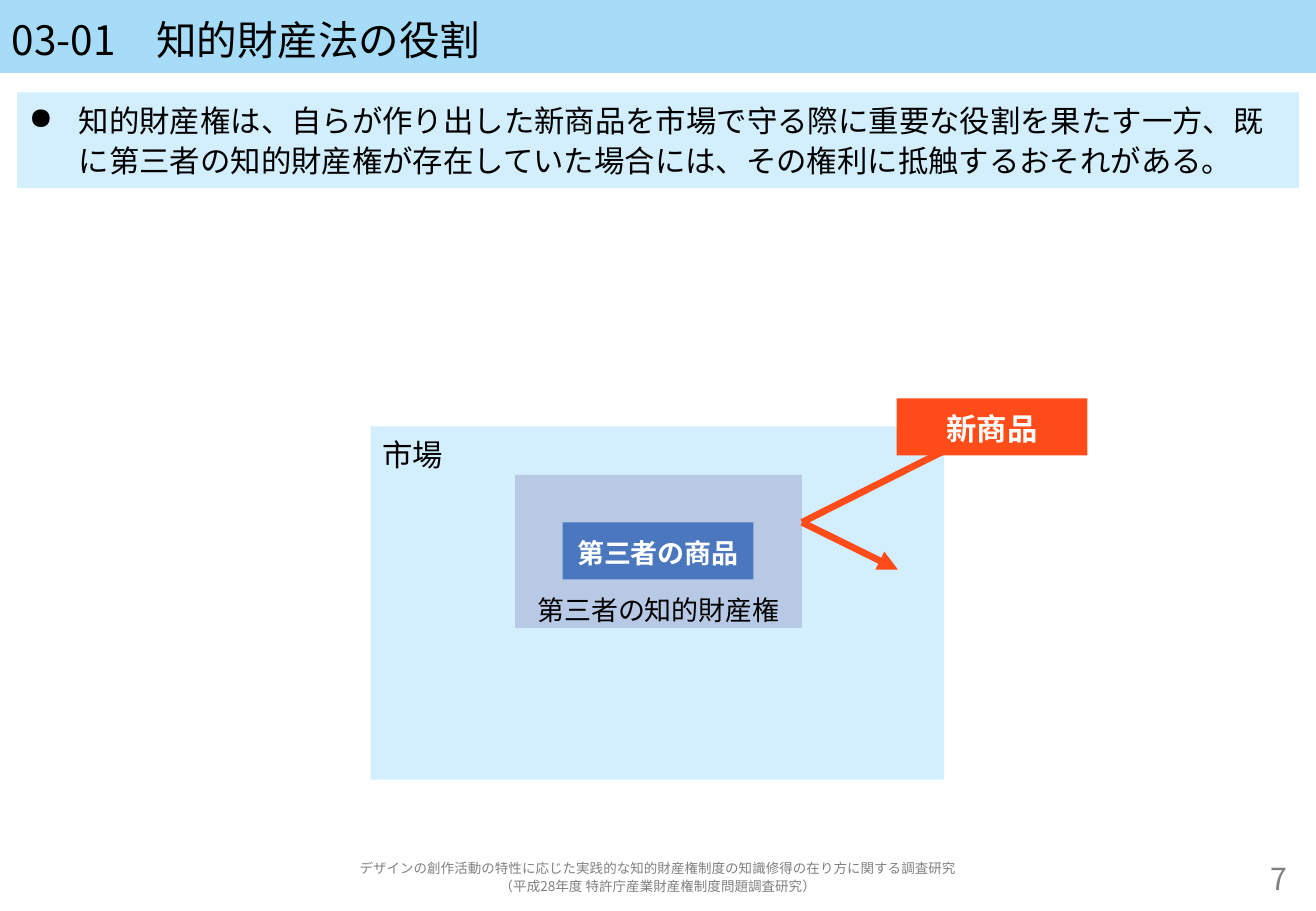
from lxml import etree
from pptx import Presentation
from pptx.dml.color import RGBColor
from pptx.enum.shapes import MSO_CONNECTOR, MSO_SHAPE
from pptx.enum.text import MSO_ANCHOR, PP_ALIGN
from pptx.oxml.ns import qn
from pptx.util import Pt

PX = 9144
FONT = "Noto Sans CJK JP"
RECT, LINE = MSO_SHAPE.RECTANGLE, MSO_CONNECTOR.STRAIGHT
TOP, MID = MSO_ANCHOR.TOP, MSO_ANCHOR.MIDDLE
LEFT, MIDST, RIGHT = PP_ALIGN.LEFT, PP_ALIGN.CENTER, PP_ALIGN.RIGHT
COLORS = {
    "head": "A7DCF9", "pale": "D3EEFC", "right": "B7C9E5", "rival": "4B77BE",
    "new": "FF4C18", "ink": "000000", "white": "FFFFFF", "gray": "808080",
}


def color(name):
    """Return a named colour."""
    return RGBColor.from_string(COLORS[name])


def write(shape, text, size, ink="ink", align=LEFT, anchor=MID, bold=False):
    """Write the lines of a text into a shape."""
    frame = shape.text_frame
    frame.word_wrap = True
    frame.vertical_anchor = anchor
    frame.margin_left = frame.margin_right = 10 * PX
    frame.margin_top = frame.margin_bottom = 5 * PX
    frame.text = text
    for para in frame.paragraphs:
        para.alignment = align
        para.line_spacing = 1.1
        font = para.font
        font.name, font.size, font.bold = FONT, Pt(size), bold
        font.color.rgb = color(ink)
        props = para._p.pPr.find(qn("a:defRPr"))
        east = etree.Element(qn("a:ea"), typeface=FONT)
        props.find(qn("a:latin")).addnext(east)
    return frame.paragraphs[0]


def block(slide, box, fill):
    """Draw a plain filled rectangle."""
    shape = slide.shapes.add_shape(RECT, *(n * PX for n in box))
    shape.shadow.inherit = False
    shape.fill.solid()
    shape.fill.fore_color.rgb = color(fill)
    shape.line.fill.background()
    return shape


def label(slide, box, text, size, ink, align):
    """Place text without a fill."""
    shape = slide.shapes.add_textbox(*(n * PX for n in box))
    write(shape, text, size, ink, align)


def stroke(slide, start, end, arrow=False):
    """Draw one leg of the path of the new product."""
    line = slide.shapes.add_connector(LINE, *(n * PX for n in start + end))
    line.line.color.rgb = color("new")
    line.line.width = Pt(4)
    if arrow:
        etree.SubElement(line.line._get_or_add_ln(), qn("a:tailEnd"), type="triangle")
    etree.SubElement(line._element.spPr, qn("a:effectLst"))


def header(slide, box):
    """Build the title band."""
    write(block(slide, box, "head"), "03-01\u3000知的財産法の役割".replace("\u3000", "　"), 24)


def lead(slide, box):
    """Build the bulleted message."""
    text = ("知的財産権は、自らが作り出した新商品を市場で守る際に重要な役割を果たす一方、"
            "既に第三者の知的財産権が存在していた場合には、その権利に抵触するおそれがある。")
    para = write(block(slide, box, "pale"), text, 18, anchor=TOP)
    props = para._p.pPr
    props.set("marL", str(41 * PX))
    props.set("indent", str(-41 * PX))
    bullet = etree.Element(qn("a:buChar"), char="●")
    props.find(qn("a:defRPr")).addprevious(bullet)


def market(slide, box):
    """Build the market with the rival's right and the new product."""
    x, y, w, h = box
    write(block(slide, box, "pale"), "市場", 18, anchor=TOP)
    left, top, wide, high = x + 119, y + 40, 236, 126
    block(slide, (left, top, wide, high), "right")
    tag = 157, 47
    rival = block(slide, (left + 39, top + 39, *tag), "rival")
    write(rival, "第三者の商品", 16, "white", MIDST, bold=True)
    label(slide, (left, top + 86, wide, 47), "第三者の知的財産権", 16, "ink", MIDST)
    hit = left + wide, top + 39
    stroke(slide, (x + w + 40, y), hit)
    new = block(slide, (x + w - 39, y - 23, *tag), "new")
    write(new, "新商品", 18, "white", MIDST, bold=True)
    stroke(slide, hit, (hit[0] + 79, hit[1] + 39), True)


def footer(slide, box):
    """Build the source note and the page number."""
    x, y, w, h = box
    note = ("デザインの創作活動の特性に応じた実践的な知的財産権制度の知識修得の在り方に関する調査研究\n"
            "（平成28年度 特許庁産業財産権制度問題調査研究）")
    label(slide, box, note, 8, "gray", MIDST)
    label(slide, (x + w - 134, y, 134, h), "7", 18, "gray", RIGHT)


def main():
    """Build and save the slide."""
    deck = Presentation()
    deck.slide_width, deck.slide_height = 1083 * PX, 750 * PX
    slide = deck.slides.add_slide(deck.slide_layouts[6])
    header(slide, (0, 0, 1083, 60))
    lead(slide, (14, 76, 1055, 79))
    market(slide, (305, 351, 472, 291))
    footer(slide, (14, 706, 1055, 31))
    deck.save("out.pptx")


if __name__ == "__main__":
    main()
